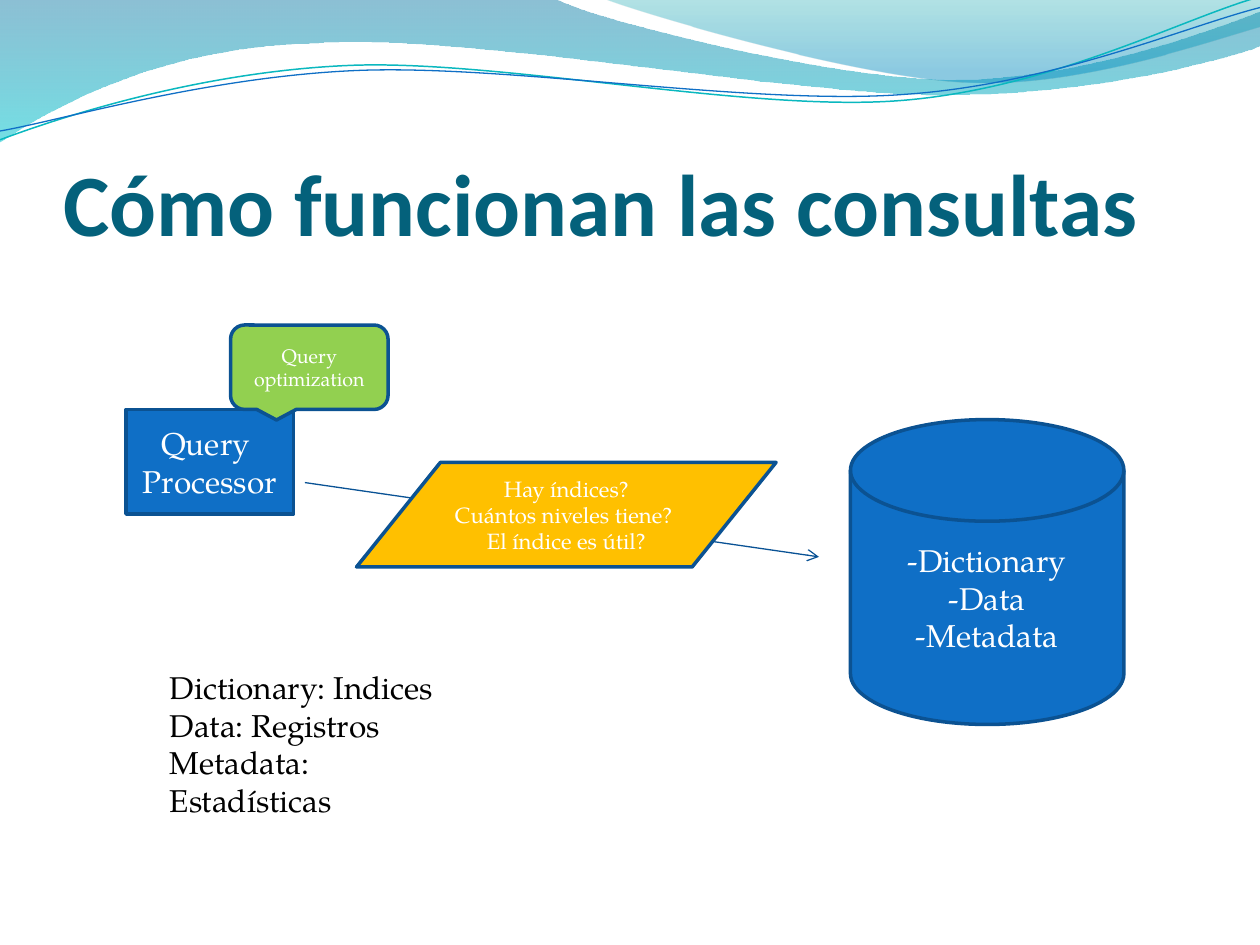
from dataclasses import dataclass

from lxml import etree
from pptx import Presentation
from pptx import util as u
from pptx.dml.color import RGBColor
from pptx.enum import shapes, text
from pptx.oxml import ns

COLORS = {
    "title": "04617B", "blue": "0F6FC6", "outline": "0B5292", "arrow": "095295",
    "green": "92D050", "amber": "FFC000", "white": "FFFFFF", "black": "000000",
    "deep": "0074A1", "aqua": "00C6CF", "teal": "00A1A9", "sky": "008BBF",
    "ribbon": "0AB8BF",
}
BODY_FONT = "TeX Gyre Pagella"
Point = tuple[float, float]


@dataclass
class Stop:
    position: float
    color: str
    opacity: int


@dataclass
class Wave:
    start: Point
    segments: list[tuple[Point, ...]]
    stops: tuple[Stop, ...] = ()
    line: str = ""
    width: float = 0


@dataclass
class Node:
    kind: shapes.MSO_SHAPE
    bounds: tuple[float, float, float, float]
    fill: str
    lines: list[str]
    size: float


WAVES = [
    Wave((0, 0), [
        ((4.4, -0.01),),
        ((4.76, 0.17), (6.64, 0.63), (7.58, 0.63)),
        ((8.53, 0.63), (9.58, 0.26), (10, 0.09)),
        ((10.01, 0.36),),
        ((9.83, 0.44), (8.7, 0.76), (7.46, 0.75)),
        ((6.22, 0.75), (3.82, 0.28), (2.57, 0.34)),
        ((1.29, 0.36), (0.46, 0.83), (-0.01, 1.13)),
        ((0, 0),),
    ], stops=(Stop(0, "deep", 45), Stop(1, "aqua", 55))),
    Wave((4.79, -0.01), [
        ((5.09, 0.11), (6.82, 0.62), (7.69, 0.65)),
        ((8.56, 0.69), (9.61, 0.32), (10, 0.21)),
        ((10, 0),),
        ((4.79, -0.01),),
    ], stops=(Stop(0, "teal", 30), Stop(0.8, "sky", 45))),
    Wave((0, 1.11), [
        ((0.48, 0.93), (1.58, 0.57), (2.77, 0.52)),
        ((3.95, 0.47), (5.93, 0.89), (7.13, 0.8)),
        ((8.33, 0.71), (9.38, 0.15), (9.98, -0.02)),
    ], line="ribbon", width=0.85),
    Wave((0, 1.04), [
        ((0.47, 0.96), (1.64, 0.61), (2.83, 0.56)),
        ((4.03, 0.51), (5.97, 0.84), (7.17, 0.75)),
        ((8.36, 0.67), (9.41, 0.21), (10, 0.06)),
    ], line="blue", width=0.75),
]

PROCESSOR = Node(shapes.MSO_SHAPE.RECTANGLE, (1, 3.25, 1.33, 0.83), "blue",
                 ["Query  Processor"], 18)
STORE = Node(shapes.MSO_SHAPE.FLOWCHART_MAGNETIC_DISK, (6.75, 3.33, 2.17, 2.42), "blue",
             ["-Dictionary", "-Data", "-Metadata"], 18)
OPTIMIZATION = Node(shapes.MSO_SHAPE.ROUNDED_RECTANGULAR_CALLOUT, (1.83, 2.58, 1.25, 0.67),
                    "green", ["Query optimization"], 11.2)
QUESTIONS = Node(shapes.MSO_SHAPE.FLOWCHART_DATA, (2.83, 3.67, 3.33, 0.83), "amber",
                 ["Hay índices?", "Cuántos niveles tiene? ", "El índice es útil?"], 12.6)
LEGEND = ["Dictionary: Indices", "Data: Registros", "Metadata: Estadísticas"]


def rgb(name: str) -> RGBColor:
    return RGBColor.from_string(COLORS[name])


def inches(values) -> list[u.Inches]:
    return [u.Inches(value) for value in values]


def bend_edges(shape, segments: list[tuple[Point, ...]]) -> None:
    outline = next(shape._element.spPr.iter(ns.qn("a:path")))
    edges = iter(outline.findall(ns.qn("a:lnTo")))
    for segment in segments:
        group = [next(edges) for _ in segment]
        if len(group) == 1:
            continue
        curve = etree.Element(ns.qn("a:cubicBezTo"))
        group[0].addprevious(curve)
        for edge in group:
            curve.append(edge[0])
            outline.remove(edge)


def add_wave(page, wave: Wave) -> None:
    builder = page.shapes.build_freeform(*inches(wave.start), scale=1.0)
    builder.add_line_segments(
        [inches(point) for segment in wave.segments for point in segment],
        close=bool(wave.stops))
    shape = builder.convert_to_shape()
    bend_edges(shape, wave.segments)
    shape.shadow.inherit = False
    if not wave.stops:
        shape.fill.background()
        shape.line.color.rgb = rgb(wave.line)
        shape.line.width = u.Pt(wave.width)
        return
    shape.line.fill.background()
    shape.fill.gradient()
    shape.fill.gradient_angle = 270
    for target, stop in zip(shape.fill.gradient_stops, wave.stops):
        target.position = stop.position
        target.color.rgb = rgb(stop.color)
    for color, stop in zip(shape._element.spPr.iter(ns.qn("a:srgbClr")), wave.stops):
        etree.SubElement(color, ns.qn("a:alpha"), val=str(stop.opacity * 1000))


def write_lines(frame, lines: list[str], size: float, color: str, align) -> None:
    frame.word_wrap = True
    for index, line in enumerate(lines):
        para = frame.paragraphs[0] if index == 0 else frame.add_paragraph()
        para.text = line
        para.alignment = align
        para.font.name = BODY_FONT
        para.font.size = u.Pt(size)
        para.font.color.rgb = rgb(color)


def add_node(page, node: Node) -> None:
    shape = page.shapes.add_shape(node.kind, *inches(node.bounds))
    shape.shadow.inherit = False
    shape.fill.solid()
    shape.fill.fore_color.rgb = rgb(node.fill)
    shape.line.color.rgb = rgb("outline")
    shape.line.width = u.Pt(2)
    shape.text_frame.vertical_anchor = text.MSO_ANCHOR.MIDDLE
    write_lines(shape.text_frame, node.lines, node.size, "white", text.PP_ALIGN.CENTER)


def add_arrow(page, start: Point, end: Point) -> None:
    arrow = page.shapes.add_connector(
        shapes.MSO_CONNECTOR.STRAIGHT, *inches(start + end))
    arrow.line.color.rgb = rgb("arrow")
    arrow.line.width = u.Pt(0.75)
    properties = arrow._element.spPr
    etree.SubElement(properties.find(ns.qn("a:ln")), ns.qn("a:tailEnd"), type="arrow")
    etree.SubElement(properties, ns.qn("a:effectLst"))


def add_title(page, wording: str) -> None:
    title = page.shapes.title
    title.left, title.top, title.width, title.height = inches((0.5, 0.77, 9, 1.25))
    frame = title.text_frame
    frame.margin_left, frame.margin_top, frame.margin_right, frame.margin_bottom = inches(
        (0, 0.05, 0, 0))
    frame.vertical_anchor = text.MSO_ANCHOR.BOTTOM
    frame.auto_size = text.MSO_AUTO_SIZE.NONE
    para = frame.paragraphs[0]
    para.text = wording
    para.alignment = text.PP_ALIGN.LEFT
    para.font.name = "Calibri"
    para.font.size = u.Pt(50)
    para.font.bold = True
    para.font.color.rgb = rgb("title")


def main() -> None:
    deck = Presentation()
    deck.slide_width, deck.slide_height = inches((10, 7.5))
    page = deck.slides.add_slide(deck.slide_layouts[5])
    for wave in WAVES:
        add_wave(page, wave)
    add_title(page, "Cómo funcionan las consultas")
    add_node(page, PROCESSOR)
    add_node(page, STORE)
    add_arrow(page, (2.42, 3.83), (6.5, 4.42))
    add_node(page, OPTIMIZATION)
    add_node(page, QUESTIONS)
    box = page.shapes.add_textbox(*inches((1.25, 5.25, 2.64, 1.01)))
    write_lines(box.text_frame, LEGEND, 18, "black", text.PP_ALIGN.LEFT)
    deck.save("out.pptx")


if __name__ == "__main__":
    main()
